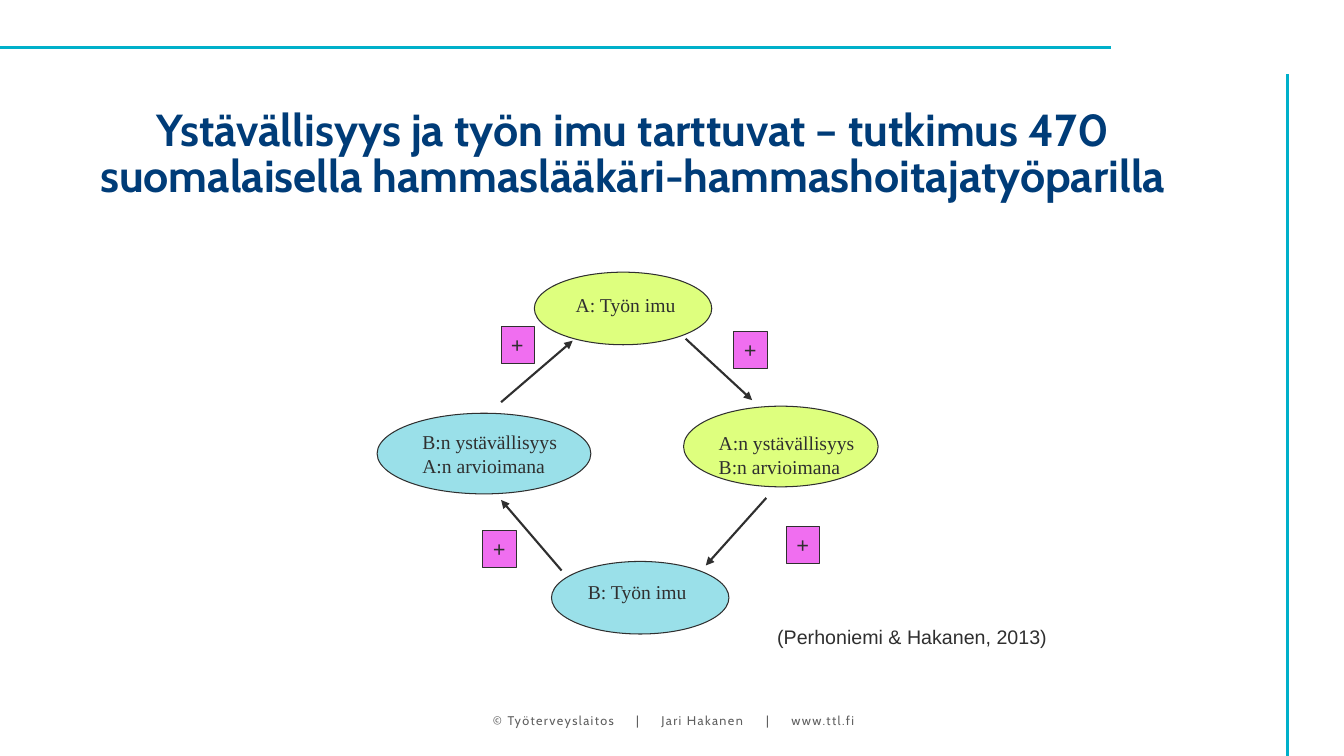
"""Build the slide on how friendliness and work engagement spread within dental work pairs."""
import pptx
import pptx.dml.color
import pptx.enum.shapes
import pptx.enum.text
import pptx.oxml
import pptx.oxml.ns
import pptx.util

PX = 9144
COLORS = {"teal": "00B0CA", "navy": "003C78", "grey": "606060", "ink": "2F2F2F",
          "lime": "D0FF45", "aqua": "66D0DF", "pink": "F06EF0"}
OPACITY = {"lime": 69, "aqua": 66, "pink": 100}
SERIF = "Times New Roman"

TITLE = "Ystävällisyys ja työn imu tarttuvat – tutkimus 470 suomalaisella hammaslääkäri-hammashoitajatyöparilla"
FOOTER = ["© Työterveyslaitos", "|", "Jari Hakanen", "|", "www.ttl.fi"]
FOOTER_TABS = [142, 167, 271, 296]
CITATION = "(Perhoniemi & Hakanen, 2013)"

RULES = [((0, 47), (1102, 47)), ((1277, 750), (1277, 73))]
STAGES = [
    ("A: Työn imu", "lime", (530, 270, 176, 72), (560, 286, 121, 34), "CENTER"),
    ("A:n ystävällisyys\nB:n arvioimana", "lime", (678, 403, 193, 80), (703, 423, 156, 57), "LEFT"),
    ("B: Työn imu", "aqua", (547, 557, 176, 72), (572, 570, 120, 34), "CENTER"),
    ("B:n ystävällisyys\nA:n arvioimana", "aqua", (374, 410, 212, 80), (409, 422, 155, 57), "LEFT"),
]
ARROWS = [((680, 336), (746, 397)), ((760, 494), (700, 561)),
          ((557, 566), (497, 496)), ((497, 399), (568, 338))]
PLUS_CORNERS = [(728, 329), (780, 522), (479, 526), (497, 324)]
PLUS_SIZE = (33, 37)

deck = pptx.Presentation()
deck.slide_width, deck.slide_height = 1333 * PX, 750 * PX
slide = deck.slides.add_slide(deck.slide_layouts[6])


def rgb(name):
    return pptx.dml.color.RGBColor.from_string(COLORS[name])


def emu(lengths):
    return [length * PX for length in lengths]


def add_xml(parent, tag, **attributes):
    element = pptx.oxml.parse_xml(f"<a:{tag} {pptx.oxml.ns.nsdecls('a')}/>")
    for key, value in attributes.items():
        element.set(key, str(value))
    parent.append(element)
    return element


def write(text, box=None, holder=None, font=SERIF, size=14, color="ink", bold=False, align="LEFT",
          anchor="TOP", wrap=False, insets=(10, 5, 10, 5), leading=None, tracking=None, tabs=()):
    holder = holder or slide.shapes.add_textbox(*emu(box))
    frame = holder.text_frame
    frame.text = text
    frame.word_wrap = wrap
    frame.vertical_anchor = getattr(pptx.enum.text.MSO_ANCHOR, anchor)
    frame.margin_left, frame.margin_top, frame.margin_right, frame.margin_bottom = emu(insets)
    for paragraph in frame.paragraphs:
        paragraph.alignment = getattr(pptx.enum.text.PP_ALIGN, align)
        if leading:
            paragraph.line_spacing = leading
        if tabs:
            stops = add_xml(paragraph._p.get_or_add_pPr(), "tabLst")
            for stop in tabs:
                add_xml(stops, "tab", pos=stop * PX, algn="l")
        for run in paragraph.runs:
            run.font.name, run.font.size, run.font.bold = font, pptx.util.Pt(size), bold
            run.font.color.rgb = rgb(color)
            if tracking:
                run._r.get_or_add_rPr().set("spc", str(tracking))


def draw_line(start, end, color, width, arrow=False):
    line = slide.shapes.add_connector(pptx.enum.shapes.MSO_CONNECTOR.STRAIGHT, *emu(start + end))
    line.line.color.rgb = rgb(color)
    line.line.width = pptx.util.Pt(width)
    if arrow:
        add_xml(line.line._get_or_add_ln(), "tailEnd", type="triangle")
    add_xml(line._element.spPr, "effectLst")


def draw_shape(kind, box, color):
    shape = slide.shapes.add_shape(getattr(pptx.enum.shapes.MSO_SHAPE, kind), *emu(box))
    shape.shadow.inherit = False
    shape.fill.solid()
    shape.fill.fore_color.rgb = rgb(color)
    if OPACITY[color] < 100:
        fill_color = shape._element.spPr.find(".//" + pptx.oxml.ns.qn("a:srgbClr"))
        add_xml(fill_color, "alpha", val=OPACITY[color] * 1000)
    shape.line.color.rgb = rgb("ink")
    shape.line.width = pptx.util.Pt(0.75)
    return shape


for start, end in RULES:
    draw_line(start, end, "teal", 1.85)
write(TITLE, (65, 115, 1126, 85), font="Cabin", size=32, color="navy", bold=True, align="CENTER",
      anchor="BOTTOM", wrap=True, insets=(0, 0, 0, 0), leading=0.85)
write("\t".join(FOOTER), (253, 695, 830, 40), font="Cabin", size=9, color="grey", anchor="MIDDLE",
      wrap=True, insets=(236, 5, 10, 5), tracking=100, tabs=FOOTER_TABS)

for label, color, oval, label_box, align in STAGES:
    draw_shape("OVAL", oval, color)
    write(label, label_box, align=align)
for start, end in ARROWS:
    draw_line(start, end, "ink", 1.5, arrow=True)
for corner in PLUS_CORNERS:
    write("+", holder=draw_shape("RECTANGLE", corner + PLUS_SIZE, "pink"), size=16, bold=True)
write(CITATION, (761, 615, 289, 34), font="Arial")

deck.save("out.pptx")
